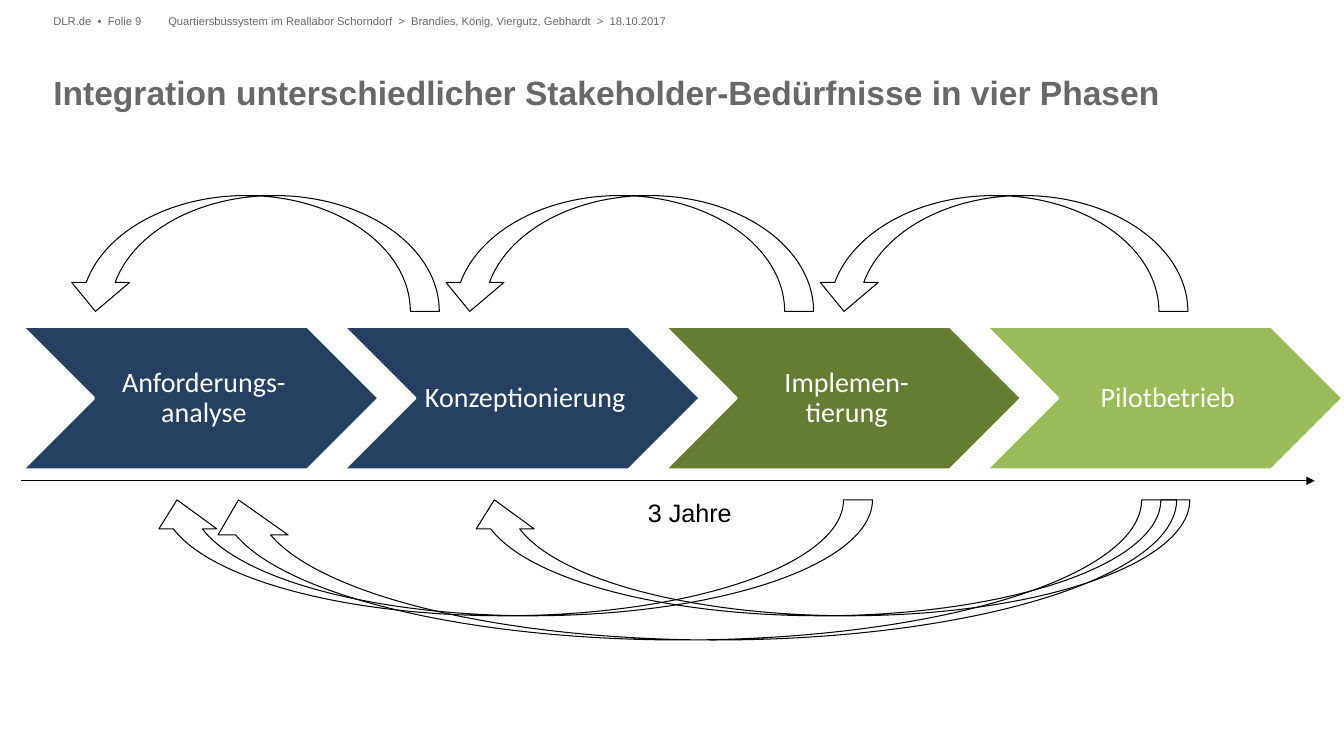
from dataclasses import dataclass

from pptx import Presentation
from pptx import util as u
from pptx.dml.color import RGBColor
from pptx.enum import shapes, text
from pptx.oxml.ns import qn
from pptx.oxml.xmlchemy import OxmlElement


@dataclass(frozen=True)
class Theme:
    head: str = "Arial"
    body: str = "Calibri"
    gray: str = "686868"
    black: str = "000000"
    white: str = "FFFFFF"
    navy: str = "254061"
    olive: str = "647D33"
    lime: str = "9ABB59"
    tiny: int = 8
    mid: int = 18
    label: int = 20
    title: int = 24
    thin: float = 0.75
    edge: float = 2


def put_text(frame, words, font, size, color, bold=False, align=None,
             anchor=None, wrap=True, pad=(0, 0, 0, 0), space=None):
    """Write one paragraph; pad is left, top, right, bottom in inches."""
    frame.word_wrap = wrap
    frame.vertical_anchor = anchor
    (frame.margin_left, frame.margin_top,
     frame.margin_right, frame.margin_bottom) = map(u.Inches, pad)
    para = frame.paragraphs[0]
    para.alignment = align
    para.line_spacing = space
    run = para.add_run()
    run.text = words
    run.font.name, run.font.size, run.font.bold = font, u.Pt(size), bold
    run.font.color.rgb = RGBColor.from_string(color)


class Deck:
    """Places parts by percent of the slide's width and height."""

    def __init__(self, theme):
        self.theme = theme
        self.prs = Presentation()
        self.prs.slide_width = u.Inches(13.34)
        self.prs.slide_height = u.Inches(7.5)
        self.slide = self.prs.slides.add_slide(self.prs.slide_layouts[6])

    def area(self, x, y, w, h):
        wide, high = self.prs.slide_width, self.prs.slide_height
        return [round(n * full / 100)
                for n, full in ((x, wide), (y, high), (w, wide), (h, high))]

    def stroke(self, line, color, width):
        line.color.rgb = RGBColor.from_string(color)
        line.width = u.Pt(width)

    def label(self, words, *box, **style):
        shape = self.slide.shapes.add_textbox(*self.area(*box))
        put_text(shape.text_frame, words, **style)

    def shape(self, kind, box, line, width, fill=None):
        part = self.slide.shapes.add_shape(kind, *self.area(*box))
        part.shadow.inherit = False
        self.stroke(part.line, line, width)
        if fill:
            part.fill.solid()
            part.fill.fore_color.rgb = RGBColor.from_string(fill)
        else:
            part.fill.background()
        return part

    def phase(self, words, fill, x, y, w, h):
        t = self.theme
        self.shape(shapes.MSO_SHAPE.CHEVRON, (x, y, w, h),
                   t.white, t.edge, fill)
        self.label(words, x + w * 0.2, y, w * 0.602, h, font=t.body,
                   size=t.label, color=t.white, align=text.PP_ALIGN.CENTER,
                   anchor=text.MSO_ANCHOR.MIDDLE, space=0.9,
                   pad=(0.09, 0.03, 0.03, 0.03))

    def loop(self, *box, below=False):
        """Curved arrow that points back to the left."""
        part = self.shape(shapes.MSO_SHAPE.CURVED_DOWN_ARROW, box,
                          self.theme.black, self.theme.thin)
        frame = part._element.spPr.find(qn("a:xfrm"))
        frame.set("flipH", "1")
        if below:
            frame.set("flipV", "1")

    def arrow(self, x, y, w):
        left, top, wide, _ = self.area(x, y, w, 0)
        line = self.slide.shapes.add_connector(
            shapes.MSO_CONNECTOR.STRAIGHT, left, top, left + wide, top)
        self.stroke(line.line, self.theme.black, self.theme.thin)
        tip = OxmlElement("a:tailEnd")
        tip.set("type", "triangle")
        line.line._get_or_add_ln().append(tip)
        line._element.spPr.append(OxmlElement("a:effectLst"))


def main():
    t = Theme()
    deck = Deck(t)

    # Header and title
    small = dict(font=t.head, size=t.tiny, color=t.gray)
    deck.label("Quartiersbussystem im Reallabor Schorndorf  >  Brandies, "
               "König, Viergutz, Gebhardt  >  18.10.2017",
               12.52, 1.87, 83.43, 2.13, **small)
    deck.label("DLR.de  •  Folie 9", 3.97, 1.87, 8.55, 2.13, **small)
    deck.label("Integration unterschiedlicher Stakeholder-Bedürfnisse "
               "in vier Phasen", 3.97, 9.47, 91.98, 10.8,
               font=t.head, size=t.title, color=t.gray, bold=True)

    # Four phases
    phases = [("Anforderungs-analyse", t.navy), ("Konzeptionierung", t.navy),
              ("Implemen-tierung", t.olive), ("Pilotbetrieb", t.lime)]
    for col, (name, fill) in enumerate(phases):
        deck.phase(name, fill, 1.65 + col * 23.91, 43.2, 26.54, 18.93)

    # Loops to the phase before
    for col in range(3):
        deck.loop(4.95 + col * 27.85, 25.87, 27.74, 15.33)

    # Loops across several phases
    for x, w, h in ((34.63, 53.9, 15.33), (11.02, 53.9, 15.33),
                    (15.14, 72.41, 18.53)):
        deck.loop(x, 66.13, w, h, below=True)

    # Time line
    deck.arrow(1.57, 63.6, 96.26)
    deck.label("3 Jahre", 48.2, 65.73, 6.3, 4, font=t.head, size=t.mid,
               color=t.black, wrap=False)

    deck.prs.save("out.pptx")


if __name__ == "__main__":
    main()
